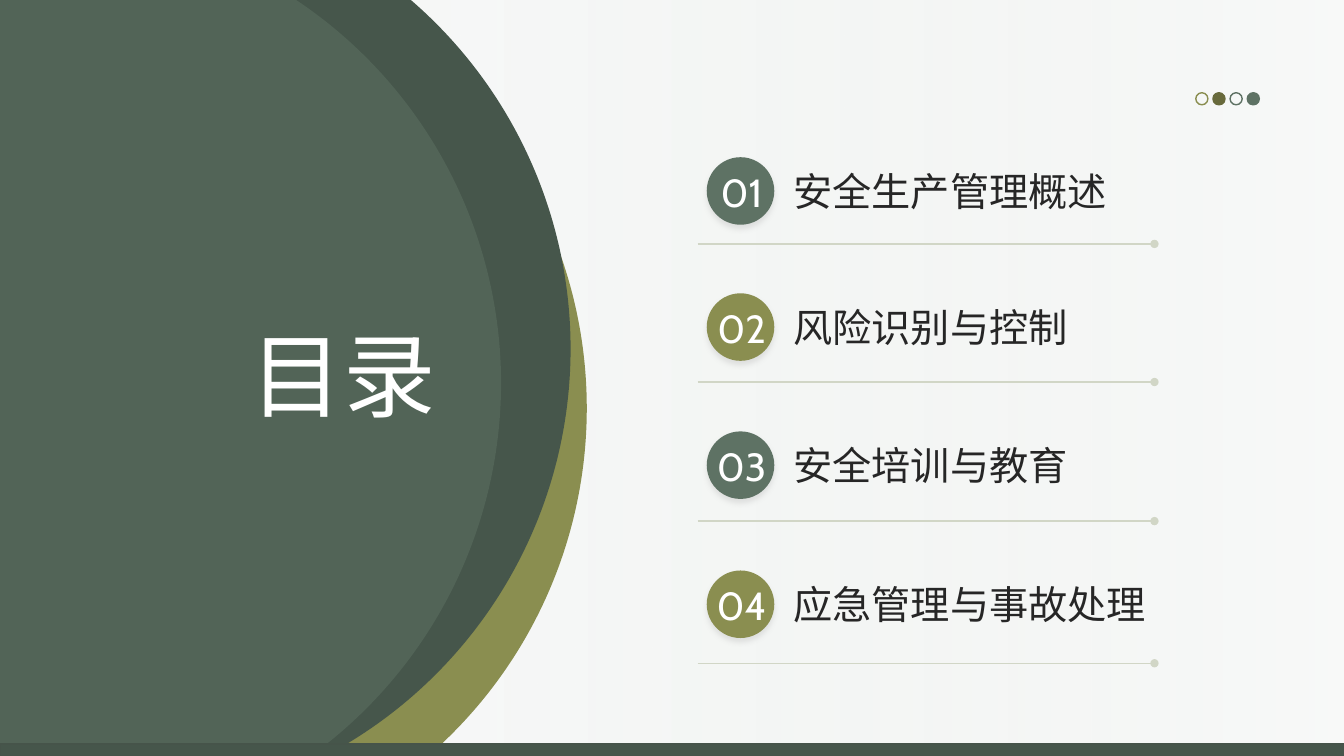
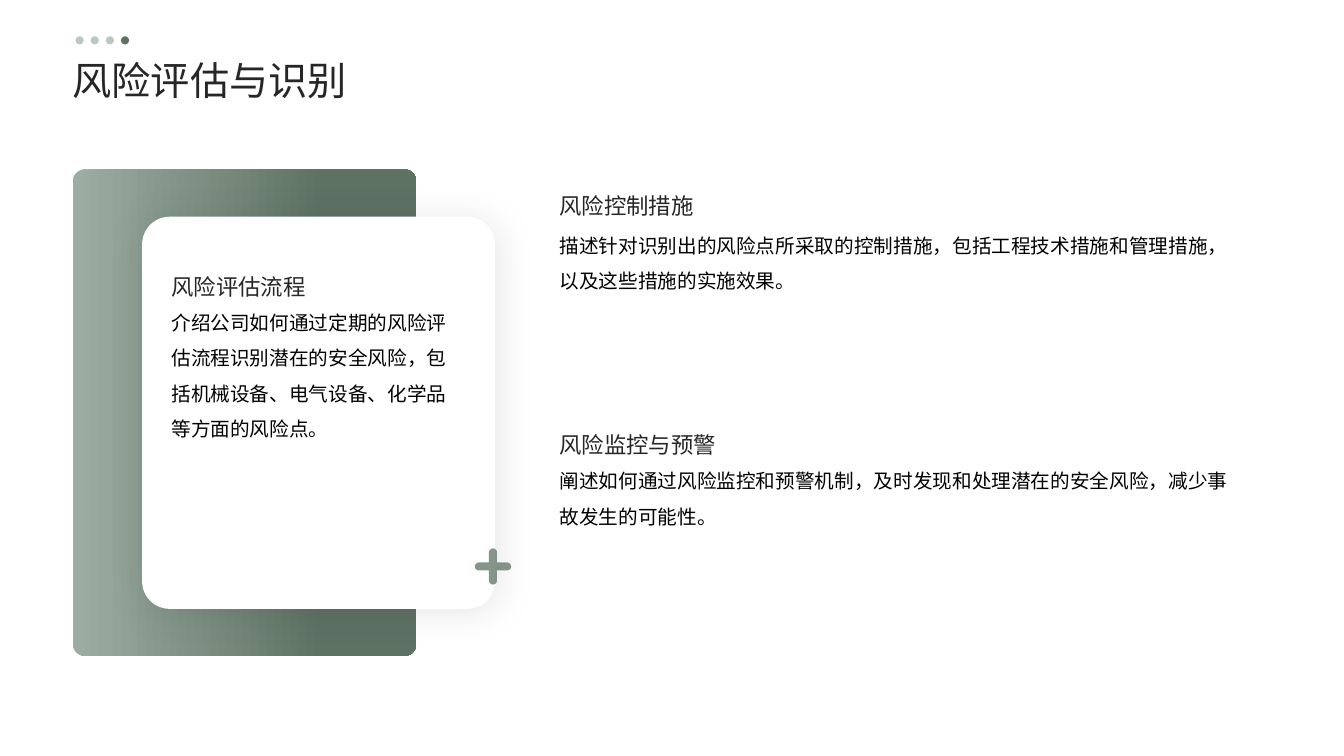
from math import asin, cos, degrees, pi, sin

from lxml.etree import SubElement
from pptx import Presentation
from pptx.dml.color import RGBColor
from pptx.enum.shapes import MSO_CONNECTOR as CONNECTOR, MSO_SHAPE as SHAPE
from pptx.enum.text import MSO_ANCHOR as ANCHOR, MSO_AUTO_SIZE as AUTO_SIZE, PP_ALIGN as ALIGN
from pptx.oxml.ns import qn
from pptx.util import Inches, Pt

WHITE = RGBColor(0xFF, 0xFF, 0xFF)
BLACK = RGBColor(0x00, 0x00, 0x00)
INK = RGBColor(0x26, 0x26, 0x26)
GREEN = RGBColor(0x5E, 0x72, 0x64)
DARK_GREEN = RGBColor(0x46, 0x56, 0x4B)
BAR_EDGE = RGBColor(0x46, 0x54, 0x4A)
PALE_GREEN = RGBColor(0x9C, 0xAD, 0xA1)
MIST = RGBColor(0xDE, 0xE4, 0xE0)
OLIVE = RGBColor(0x8A, 0x8E, 0x50)
DARK_OLIVE = RGBColor(0x68, 0x6A, 0x3C)
RULE = RGBColor(0xD1, 0xD6, 0xC6)
SHADOW_GREY = RGBColor(0xBF, 0xBF, 0xBF)

CABIN = "Cabin"
NOTO = "Noto Sans CJK SC"
SLIDE_W, SLIDE_H = 13.33, 7.5
BAR_TOP = 7.38


def set_alpha(color, percent):
    SubElement(color, qn("a:alpha")).set("val", str(percent * 1000))


def paint(shape, fill=None, line=None, alpha=None):
    """Give a shape a flat fill and outline; None leaves either out."""
    shape.shadow.inherit = False
    if fill is None:
        shape.fill.background()
    else:
        shape.fill.solid()
        shape.fill.fore_color.rgb = fill
        if alpha:
            set_alpha(next(shape.element.spPr.iter(qn("a:srgbClr"))), alpha)
    if line is None:
        shape.line.fill.background()
    else:
        shape.line.color.rgb = line
        shape.line.width = Pt(1)
    return shape


def paint_gradient(shape, start, end, end_position=1.0, end_alpha=None):
    paint(shape)
    shape.fill.gradient()
    shape.fill.gradient_angle = 0
    first, last = shape.fill.gradient_stops
    first.color.rgb, last.color.rgb = start, end
    first.position, last.position = 0, end_position
    if end_alpha:
        set_alpha(list(shape.element.spPr.iter(qn("a:srgbClr")))[-1], end_alpha)


def cast_shadow(shape, color, alpha, blur, distance, angle):
    effects = shape.element.spPr.find(qn("a:effectLst"))
    shadow = SubElement(effects, qn("a:outerShdw"), blurRad=str(Pt(blur)),
                        dist=str(Pt(distance)), dir=str(angle * 60000),
                        algn="ctr", rotWithShape="0")
    set_alpha(SubElement(shadow, qn("a:srgbClr"), val=str(color)), alpha)


def add_box(shapes, kind, left, top, width, height):
    return shapes.add_shape(kind, Inches(left), Inches(top), Inches(width), Inches(height))


def add_outline(shapes, points, arcs):
    """Closed outline; arcs maps a point's index to the (radius, start, end) that leads to it."""
    corners = [(Inches(x), Inches(y)) for x, y in points]
    builder = shapes.build_freeform(*corners[0], scale=1.0)
    builder.add_line_segments(corners[1:], close=True)
    shape = builder.convert_to_shape()
    path = next(shape.element.spPr.iter(qn("a:path")))
    segments = list(path)
    for index, (radius, start, end) in arcs.items():
        arc = SubElement(path, qn("a:arcTo"), wR=str(Inches(radius)), hR=str(Inches(radius)),
                         stAng=str(round(degrees(start) % 360 * 60000)),
                         swAng=str(round(degrees(end - start) * 60000)))
        path.replace(segments[index], arc)
    return shape


def write(shape, text, size, color, font=NOTO, align=ALIGN.LEFT,
          anchor=ANCHOR.MIDDLE, spacing=1.0):
    frame = shape.text_frame
    frame.auto_size = AUTO_SIZE.NONE
    frame.word_wrap = True
    frame.vertical_anchor = anchor
    frame.margin_left = frame.margin_right = frame.margin_top = frame.margin_bottom = 0
    paragraph = frame.paragraphs[0]
    paragraph.alignment = align
    paragraph.line_spacing = spacing
    run = paragraph.add_run()
    run.text = text
    run.font.name, run.font.size = font, Pt(size)
    run.font.color.rgb = color
    SubElement(run.font._element, qn("a:ea"), typeface=NOTO)


def add_text(slide, box, *args, **style):
    write(slide.shapes.add_textbox(*map(Inches, box)), *args, **style)


def place_title(slide, box, *args, **style):
    """Fill the title placeholder and bring it in front of what is drawn so far."""
    title = slide.shapes.title
    title.left, title.top, title.width, title.height = map(Inches, box)
    title.element.getparent().append(title.element)
    write(title, *args, **style)


def add_dots(slide, left, top, size, pitch, styles):
    """Row of small dots, each given as (fill, line, alpha)."""
    group = slide.shapes.add_group_shape()
    for i, style in enumerate(styles):
        paint(add_box(group.shapes, SHAPE.OVAL, left + i * pitch, top, size, size), *style)


def add_disc(slide, center_x, center_y, fill, alpha=None, radius=4.57):
    """Large disc, cut off by the slide's left and top edges and the bottom bar."""
    start = asin(-center_y / radius)
    end = asin((BAR_TOP - center_y) / radius)
    points = [(0, 0), (center_x + radius * cos(start), 0), (center_x + radius, center_y),
              (center_x + radius * cos(end), BAR_TOP), (0, BAR_TOP)]
    arcs = {2: (radius, start, 0), 3: (radius, 0, end)}
    paint(add_outline(slide.shapes, points, arcs), fill, alpha=alpha)


def add_plus(slide, center_x, center_y, reach=0.18, half=0.04):
    """Plus sign with rounded arm ends."""
    points, arcs = [], {}
    arm = [(reach - half, -half), (reach, 0), (reach - half, half), (half, half)]
    for quarter in range(4):
        turn = quarter * pi / 2
        first = len(points)
        points += [(center_x + x * cos(turn) - y * sin(turn),
                    center_y + x * sin(turn) + y * cos(turn)) for x, y in arm]
        arcs[first + 1] = (half, turn - pi / 2, turn)
        arcs[first + 2] = (half, turn, turn + pi / 2)
    paint(add_outline(slide.shapes, points, arcs), GREEN, alpha=75)


def add_agenda_row(slide, left, top, rule_top, number, topic, color):
    badge = paint(add_box(slide.shapes, SHAPE.OVAL, left + 0.09, top, 0.67, 0.67), color)
    cast_shadow(badge, SHADOW_GREY, 40, 4, 3, 90)
    add_text(slide, (left - 0.04, top + 0.01, 0.95, 0.67), number, 28, WHITE, CABIN,
             ALIGN.CENTER)
    add_text(slide, (left + 0.95, top - 0.04, 4.63, 0.74), topic, 28, INK, CABIN)
    rule = slide.shapes.add_connector(CONNECTOR.STRAIGHT, Inches(left), Inches(rule_top),
                                      Inches(left + 4.53), Inches(rule_top))
    rule.line.color.rgb = RULE
    rule.line.width = Pt(1)
    SubElement(rule.line._get_or_add_ln(), qn("a:tailEnd"), type="oval")
    SubElement(rule.element.spPr, qn("a:effectLst"))


def add_section(slide, heading_box, body_top, body_height, heading, body,
                anchor=ANCHOR.MIDDLE):
    left, _, width, _ = heading_box
    add_text(slide, (left, body_top, width, body_height), body, 14, BLACK,
             anchor=ANCHOR.TOP, spacing=1.5)
    add_text(slide, heading_box, heading, 16, INK, anchor=anchor, spacing=1.5)


def add_process_card(slide, left, top):
    panel = add_box(slide.shapes, SHAPE.ROUNDED_RECTANGLE, left, top, 3.41, 4.83)
    panel.adjustments[0] = 0.036
    paint_gradient(panel, PALE_GREEN, GREEN, 0.73)
    card = paint(add_box(slide.shapes, SHAPE.ROUNDED_RECTANGLE,
                         left + 0.69, top + 0.47, 3.5, 3.89), WHITE)
    card.adjustments[0] = 0.078
    cast_shadow(card, BLACK, 10, 28, 3, 45)
    add_section(slide, (left + 0.98, top + 0.62, 2.91, 0.68), top + 1.29, 2.64,
                "风险评估流程",
                "介绍公司如何通过定期的风险评估流程识别潜在的安全风险，"
                "包括机械设备、电气设备、化学品等方面的风险点。", ANCHOR.BOTTOM)
    add_plus(slide, left + 4.17, top + 3.94)


def build_agenda(slide):
    backdrop = add_box(slide.shapes, SHAPE.RECTANGLE, 0, 0, SLIDE_W, SLIDE_H)
    paint_gradient(backdrop, WHITE, MIST, end_alpha=20)
    add_disc(slide, 1.25, 4.05, OLIVE)
    add_disc(slide, 1.09, 3.46, DARK_GREEN)
    add_disc(slide, 0.4, 3.8, GREEN, alpha=50)
    bar = add_box(slide.shapes, SHAPE.RECTANGLE, 0, BAR_TOP, SLIDE_W, SLIDE_H - BAR_TOP)
    paint(bar, DARK_GREEN, BAR_EDGE)
    place_title(slide, (1.49, 3.16, 2.83, 1.02), "目录", 66, WHITE, CABIN,
                ALIGN.RIGHT, ANCHOR.TOP)
    agenda = [(1.56, 2.42, "安全生产管理概述"), (2.91, 3.79, "风险识别与控制"),
              (4.28, 5.17, "安全培训与教育"), (5.66, 6.58, "应急管理与事故处理")]
    for i, (top, rule_top, topic) in enumerate(agenda):
        add_agenda_row(slide, 6.92, top, rule_top, f"{i + 1:02}", topic,
                       (GREEN, OLIVE)[i % 2])
    add_dots(slide, 11.86, 0.92, 0.12, 0.17,
             [(None, OLIVE), (DARK_OLIVE, DARK_OLIVE), (None, GREEN), (GREEN, GREEN)])


def build_risk_assessment(slide):
    add_process_card(slide, 0.72, 1.68)
    add_section(slide, (5.55, 1.84, 6.75, 0.27), 2.2, 1.76, "风险控制措施",
                "描述针对识别出的风险点所采取的控制措施，"
                "包括工程技术措施和管理措施，以及这些措施的实施效果。")
    add_section(slide, (5.55, 4.21, 6.75, 0.27), 4.54, 1.76, "风险监控与预警",
                "阐述如何通过风险监控和预警机制，"
                "及时发现和处理潜在的安全风险，减少事故发生的可能性。")
    place_title(slide, (0.72, 0.51, 11.88, 0.51), "风险评估与识别", 28, INK, spacing=1.1)
    add_dots(slide, 0.75, 0.36, 0.08, 0.15, [(GREEN, None, 40)] * 3 + [(GREEN,)])


def main():
    deck = Presentation()
    deck.slide_width, deck.slide_height = Inches(SLIDE_W), Inches(SLIDE_H)
    title_only = deck.slide_layouts[5]
    for build in (build_agenda, build_risk_assessment):
        build(deck.slides.add_slide(title_only))
    deck.save("out.pptx")


if __name__ == "__main__":
    main()
